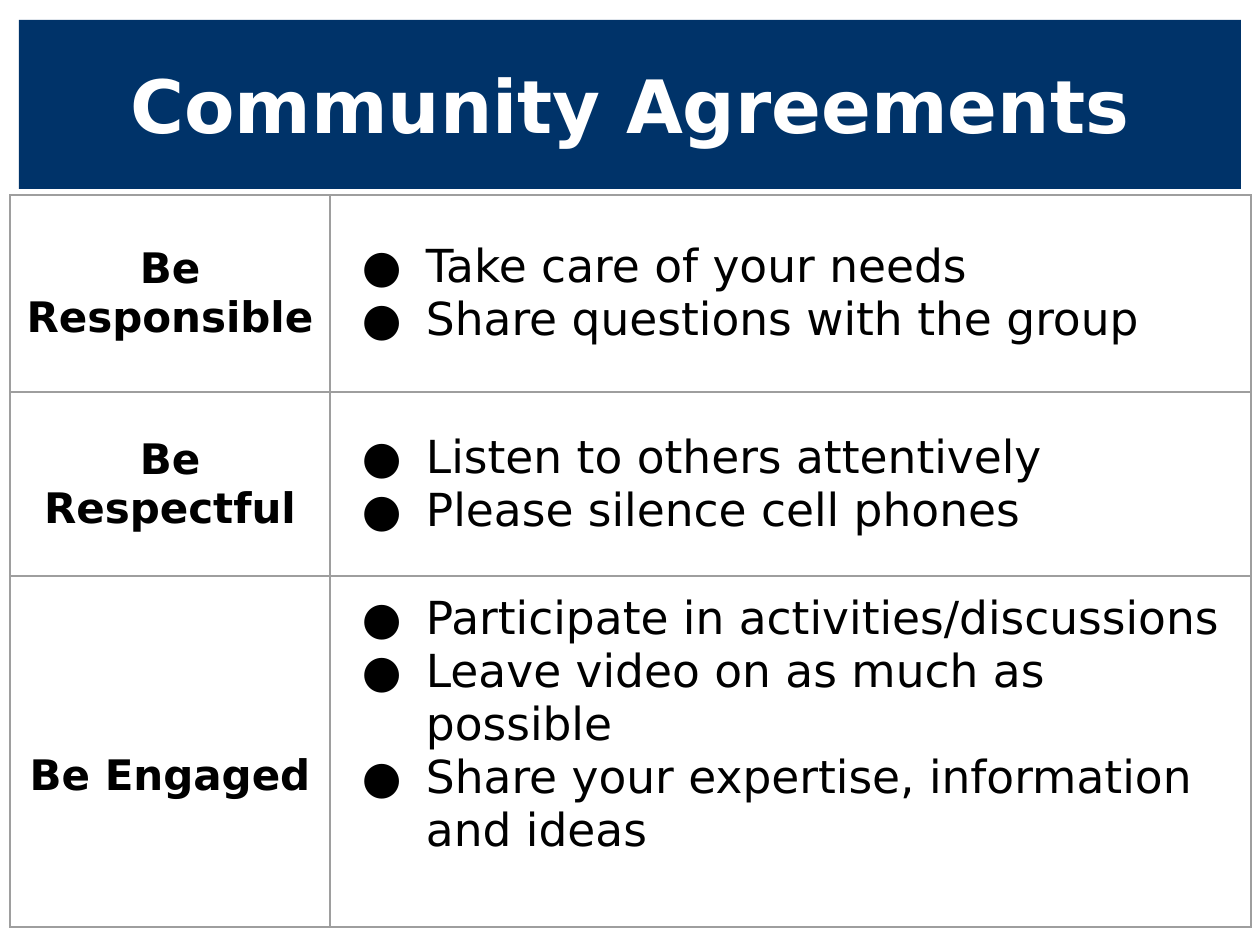
from lxml import etree
from pptx import Presentation
from pptx.dml.color import RGBColor
from pptx.enum.shapes import MSO_SHAPE
from pptx.enum.text import MSO_ANCHOR, PP_ALIGN
from pptx.oxml.ns import qn
from pptx.util import Pt

RECTANGLE = MSO_SHAPE.RECTANGLE
MIDDLE = MSO_ANCHOR.MIDDLE
CENTER = PP_ALIGN.CENTER
LEFT = PP_ALIGN.LEFT

NAVY = RGBColor(0x00, 0x33, 0x69)
WHITE = RGBColor(0xFF, 0xFF, 0xFF)
BLACK = RGBColor(0x00, 0x00, 0x00)
GRAY = RGBColor(0x9E, 0x9E, 0x9E)

FONT = "DejaVu Sans"
EMU_PER_PX = 914400 / 126
COLUMN_WIDTHS = (320, 921)
SIDE_MARGIN = 12
END_MARGIN = 16
BULLET_MARGIN = 84
BULLET_INDENT = -64

AGREEMENTS = [
    {
        "heading": "Be Responsible",
        "actions": ["Take care of your needs", "Share questions with the group"],
        "height": 197,
    },
    {
        "heading": "Be Respectful",
        "actions": ["Listen to others attentively", "Please silence cell phones"],
        "height": 184,
    },
    {
        "heading": "Be Engaged",
        "actions": [
            "Participate in activities/discussions",
            "Leave video on as much as possible",
            "Share your expertise, information and ideas",
        ],
        "height": 351,
        "heading_top": 65,
        "actions_bottom": 69,
    },
]


def px(length):
    return round(length * EMU_PER_PX)


def set_format(target, values):
    for name, value in values.items():
        setattr(target, name, value)


def write(paragraph, text, size, color, bold, alignment):
    paragraph.alignment = alignment
    run = paragraph.add_run()
    run.text = text
    set_format(run.font, {"name": FONT, "size": Pt(size), "bold": bold})
    run.font.color.rgb = color


def add_color(parent, color):
    etree.SubElement(parent, qn("a:srgbClr"), val=str(color))


def add_bullet(paragraph):
    properties = paragraph._p.get_or_add_pPr()
    properties.set("marL", str(px(BULLET_MARGIN)))
    properties.set("indent", str(px(BULLET_INDENT)))
    add_color(etree.SubElement(properties, qn("a:buClr")), BLACK)
    etree.SubElement(properties, qn("a:buFont"), typeface=FONT)
    etree.SubElement(properties, qn("a:buChar"), char="●")


def format_cell(cell, top=END_MARGIN, bottom=END_MARGIN):
    properties = cell._tc.get_or_add_tcPr()
    for side in ("lnL", "lnR", "lnT", "lnB"):
        border = etree.SubElement(properties, qn(f"a:{side}"), w=str(Pt(0.75)))
        add_color(etree.SubElement(border, qn("a:solidFill")), GRAY)
    cell.fill.background()
    set_format(cell, {
        "vertical_anchor": MIDDLE,
        "margin_left": px(SIDE_MARGIN),
        "margin_right": px(SIDE_MARGIN),
        "margin_top": px(top),
        "margin_bottom": px(bottom),
    })


def add_title(slide, text):
    banner = slide.shapes.add_shape(RECTANGLE, px(19), px(20), px(1222), px(169))
    banner.shadow.inherit = False
    banner.fill.solid()
    banner.fill.fore_color.rgb = NAVY
    banner.line.fill.background()
    set_format(banner.text_frame, {"word_wrap": True, "vertical_anchor": MIDDLE})
    write(banner.text_frame.paragraphs[0], text, 42, WHITE, True, CENTER)


def fill_heading(cell, agreement):
    format_cell(cell, top=agreement.get("heading_top", END_MARGIN))
    write(cell.text_frame.paragraphs[0], agreement["heading"], 24, BLACK, True, CENTER)


def fill_actions(cell, agreement):
    format_cell(cell, bottom=agreement.get("actions_bottom", END_MARGIN))
    frame = cell.text_frame
    for index, action in enumerate(agreement["actions"]):
        paragraph = frame.add_paragraph() if index else frame.paragraphs[0]
        add_bullet(paragraph)
        write(paragraph, action, 26, BLACK, False, LEFT)


def add_agreements(slide, agreements):
    height = sum(agreement["height"] for agreement in agreements)
    table = slide.shapes.add_table(
        len(agreements), len(COLUMN_WIDTHS),
        px(10), px(195), px(sum(COLUMN_WIDTHS)), px(height),
    ).table
    set_format(table, {"first_row": False, "horz_banding": False})
    for column, width in zip(table.columns, COLUMN_WIDTHS):
        column.width = px(width)
    for row, agreement in zip(table.rows, agreements):
        row.height = px(agreement["height"])
        heading, actions = row.cells
        fill_heading(heading, agreement)
        fill_actions(actions, agreement)


def main():
    presentation = Presentation()
    presentation.slide_width = px(1260)
    presentation.slide_height = px(945)
    slide = presentation.slides.add_slide(presentation.slide_layouts[6])
    add_title(slide, "Community Agreements")
    add_agreements(slide, AGREEMENTS)
    presentation.save("out.pptx")


if __name__ == "__main__":
    main()
